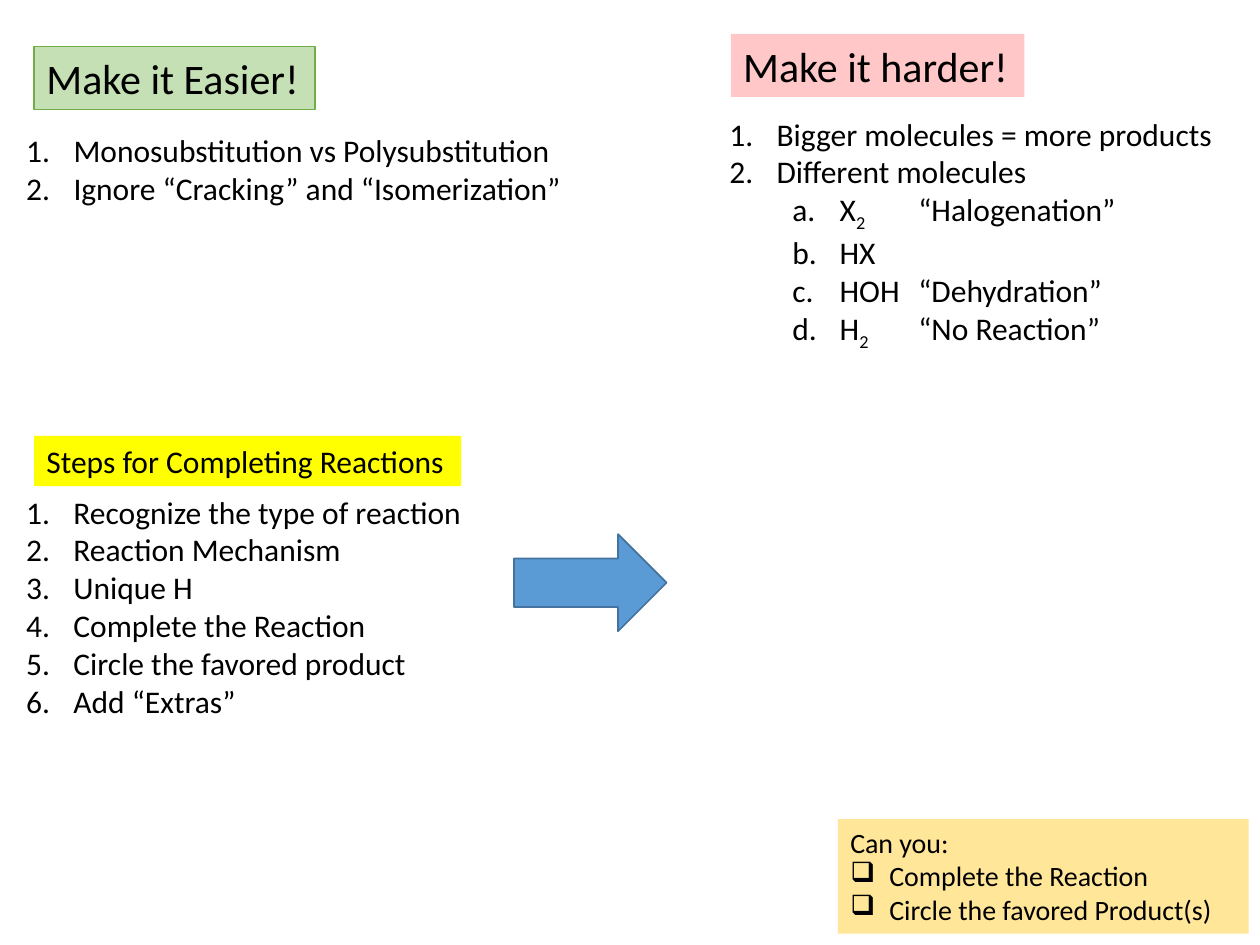
from lxml.etree import SubElement
from pptx import Presentation
from pptx.dml.color import RGBColor
from pptx.enum.shapes import MSO_SHAPE
from pptx.enum.text import MSO_ANCHOR, MSO_AUTO_SIZE, PP_ALIGN
from pptx.oxml.ns import qn
from pptx.util import Inches, Pt

COLORS = {
    "text": "000000", "easier": "C5E0B4", "easier_line": "70AD47",
    "harder": "FF0000", "steps": "FFFF00", "arrow": "5B9BD5",
    "arrow_line": "43739E", "check": "FFE699",
}
COLUMNS, ROWS = 100, 75
NUMBER = ("buAutoNum", "type", "arabicPeriod")
LETTER = ("buAutoNum", "type", "alphaLcPeriod")
CHECKBOX = ("buChar", "char", "❑")


class SlideBuilder:
    """Hold the style and the current slide, and draw each kind of element."""

    def __init__(self, presentation):
        self.presentation = presentation
        self.slide = presentation.slides.add_slide(presentation.slide_layouts[6])
        self.font = {"name": "Calibri"}

    def place(self, left, top, width, height):
        column = self.presentation.slide_width / COLUMNS
        row = self.presentation.slide_height / ROWS
        return [int(value * unit) for value, unit in
                zip((left, top, width, height), (column, row, column, row))]

    def group(self):
        return self.slide.shapes.add_group_shape().shapes

    def shape(self, shapes, kind, box, fill, line=None, opacity=None):
        shape = shapes.add_shape(kind, *self.place(*box))
        shape.shadow.inherit = False
        shape.fill.solid()
        shape.fill.fore_color.rgb = RGBColor.from_string(COLORS[fill])
        if opacity:
            color = shape.fill._xPr.find(qn("a:solidFill"))[0]
            SubElement(color, qn("a:alpha")).set("val", str(opacity * 1000))
        if line:
            shape.line.color.rgb = RGBColor.from_string(COLORS[line])
            shape.line.width = Pt(1)
        else:
            shape.line.fill.background()
        return shape

    def frame(self, shape, wrap=False):
        settings = {"word_wrap": wrap, "vertical_anchor": MSO_ANCHOR.TOP,
                    "auto_size": MSO_AUTO_SIZE.SHAPE_TO_FIT_TEXT}
        for name, value in settings.items():
            setattr(shape.text_frame, name, value)
        return shape.text_frame

    def paragraph(self, frame, pieces, size, bullet=None, left=0.375, hang=0.375, level=0):
        paragraph = frame.paragraphs[0]
        if paragraph.runs:
            paragraph = frame.add_paragraph()
        paragraph.alignment = PP_ALIGN.LEFT
        paragraph.level = level
        if bullet:
            tag, attribute, value = bullet
            properties = paragraph._p.get_or_add_pPr()
            properties.set("marL", str(Inches(left)))
            properties.set("indent", str(-Inches(hang)))
            SubElement(properties, qn(f"a:{tag}")).set(attribute, value)
        for index, text in enumerate(pieces):
            run = paragraph.add_run()
            run.text = text
            for name, setting in {**self.font, "size": Pt(size)}.items():
                setattr(run.font, name, setting)
            run.font.color.rgb = RGBColor.from_string(COLORS["text"])
            if index % 2:
                run._r.get_or_add_rPr().set("baseline", "-25000")

    def heading(self, shapes, box, text, size, fill, **options):
        shape = self.shape(shapes, MSO_SHAPE.RECTANGLE, box, fill, **options)
        self.paragraph(self.frame(shape), [text], size)

    def numbered_list(self, shapes, box, items, subitems=()):
        frame = self.frame(shapes.add_textbox(*self.place(*box)))
        for item in items:
            self.paragraph(frame, [item], 18, NUMBER)
        for pieces in subitems:
            self.paragraph(frame, pieces, 18, LETTER, left=0.875, level=1)

    def checklist(self, box, title, items):
        shape = self.shape(self.slide.shapes, MSO_SHAPE.RECTANGLE, box, "check")
        frame = self.frame(shape, wrap=True)
        self.paragraph(frame, [title], 16)
        for item in items:
            self.paragraph(frame, [item], 16, CHECKBOX, left=0.31, hang=0.31)


def main():
    presentation = Presentation()
    presentation.slide_width, presentation.slide_height = Inches(10), Inches(7.5)
    builder = SlideBuilder(presentation)

    harder = builder.group()
    builder.heading(harder, (58, 2.7, 23.3, 5), "Make it harder!", 24, "harder", opacity=22)
    builder.numbered_list(
        harder, (56.9, 8.6, 40.8, 19.2),
        ["Bigger molecules = more products", "Different molecules"],
        [["X", "2\t", "“Halogenation”"], ["HX"], ["HOH\t“Dehydration”"],
         ["H", "2\t", "“No Reaction”"]])

    easier = builder.group()
    builder.heading(easier, (2.7, 3.7, 22.3, 5), "Make it Easier!", 24, "easier",
                    line="easier_line")
    builder.numbered_list(
        easier, (1.1, 9.9, 44.9, 7.1),
        ["Monosubstitution vs Polysubstitution", "Ignore “Cracking” and “Isomerization”"])

    steps = builder.group()
    builder.numbered_list(
        steps, (1.1, 38.6, 37, 19.2),
        ["Recognize the type of reaction", "Reaction Mechanism", "Unique H",
         "Complete the Reaction", "Circle the favored product", "Add “Extras”"])
    builder.heading(steps, (2.7, 34.6, 33.9, 4), "Steps for Completing Reactions", 18, "steps")

    builder.shape(builder.slide.shapes, MSO_SHAPE.RIGHT_ARROW, (40.8, 42.4, 12.1, 7.7),
                  "arrow", line="arrow_line")
    builder.checklist((66.5, 65, 32.6, 9.1), "Can you:",
                      ["Complete the Reaction", "Circle the favored Product(s)"])
    presentation.save("out.pptx")


if __name__ == "__main__":
    main()
